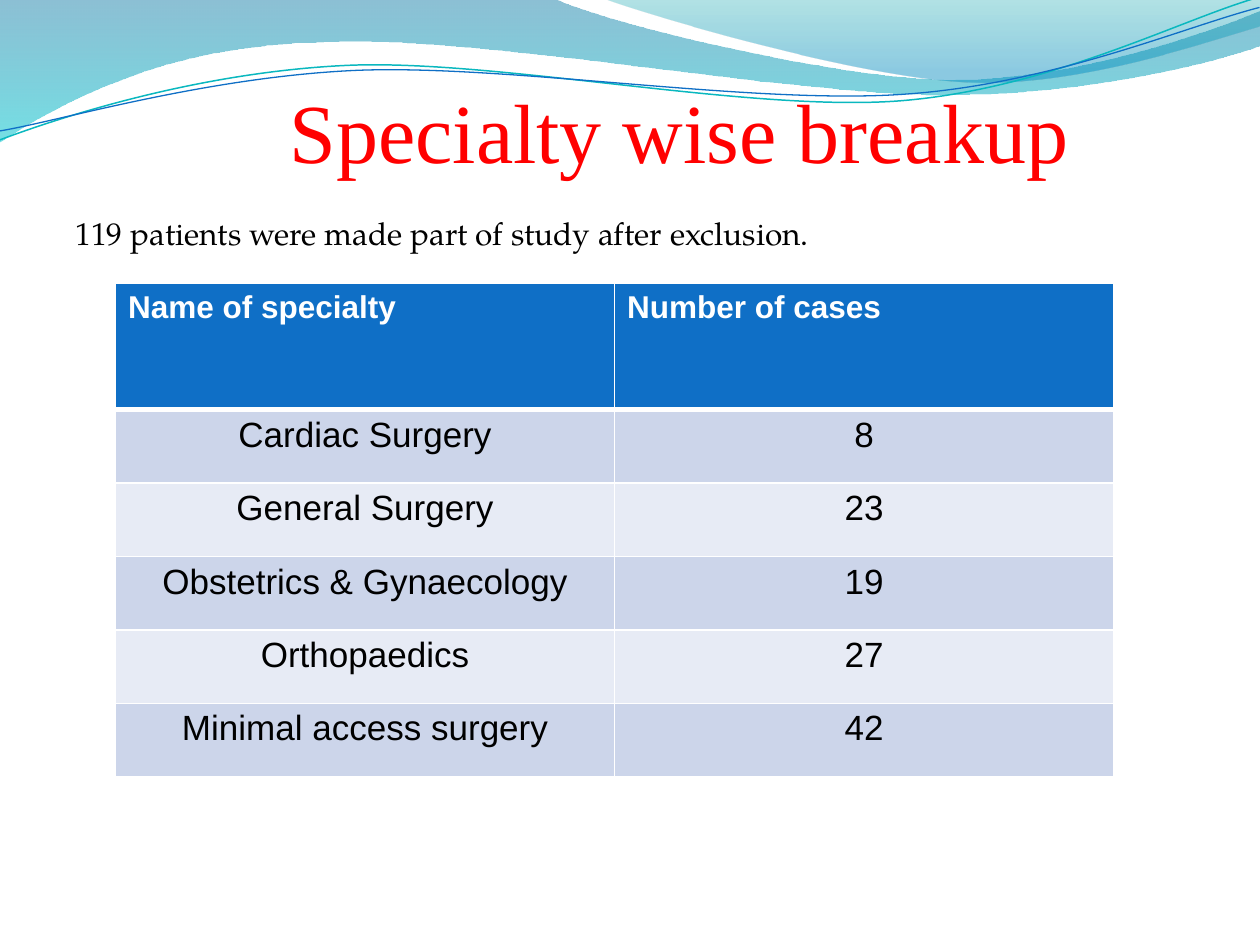
from lxml import etree
from pptx import Presentation
from pptx import util as u
from pptx.dml.color import RGBColor
from pptx.enum import text
from pptx.oxml.ns import qn

COLORS = {
    "title": "FF0000", "body": "000000", "white": "FFFFFF",
    "header": "0F6FC6", "band_dark": "CCD5EA", "band_light": "E7EBF5",
    "wave_top": "0074A1", "wave_bottom": "00C6CF",
    "crest_top": "00A1A9", "crest_bottom": "008BBF",
    "teal_line": "0AB8BF", "blue_line": "0F6FC6",
}
RGB = {name: RGBColor.from_string(value) for name, value in COLORS.items()}


def add_curve(shapes, start, segments, closed):
    """Draw a path in cm; segments hold one point (line) or three (cubic Bezier)."""
    fb = shapes.build_freeform(u.Cm(start[0]), u.Cm(start[1]))
    fb.add_line_segments([(u.Cm(x), u.Cm(y)) for seg in segments for x, y in seg],
                         close=closed)
    sp = fb.convert_to_shape()
    sp.shadow.inherit = False
    lines = iter(list(sp._element.spPr.iter(qn("a:lnTo"))))
    for seg in segments:
        first = next(lines)
        if len(seg) == 3:
            curve = etree.Element(qn("a:cubicBezTo"))
            first.addprevious(curve)
            for ln in (first, next(lines), next(lines)):
                curve.append(ln[0])
                ln.getparent().remove(ln)
    return sp


def style_run(p, font, size, color, bold=False):
    f = p.runs[0].font
    f.name, f.size, f.bold = font, u.Pt(size), bold
    f.color.rgb = RGB[color]


prs = Presentation()
prs.slide_width, prs.slide_height = u.Cm(25.4), u.Cm(19.05)
s = prs.slides.add_slide(prs.slide_layouts[6])

# Header waves: start, segments, gradient stops (position, colour, opacity %)
waves = [
    ((0, -0.02),
     [[(11.18, -0.02)],
      [(12.09, 0.43), (16.87, 1.6), (19.25, 1.6)],
      [(21.67, 1.6), (24.33, 0.66), (25.4, 0.23)],
      [(25.43, 0.91)],
      [(24.97, 1.12), (22.1, 1.93), (18.95, 1.91)],
      [(15.8, 1.91), (9.7, 0.71), (6.53, 0.86)],
      [(3.28, 0.89), (1.17, 2.11), (-0.03, 2.87)]],
     [(0, "wave_top", 45), (1, "wave_bottom", 55)]),
    ((12.17, -0.02),
     [[(12.93, 0.28), (17.32, 1.57), (19.53, 1.65)],
      [(21.74, 1.75), (24.41, 0.81), (25.4, 0.53)],
      [(25.4, 0)]],
     [(0, "crest_top", 30), (0.8, "crest_bottom", 45)]),
]
for start, segments, stops in waves:
    sp = add_curve(s.shapes, start, segments, True)
    sp.line.fill.background()
    sp.fill.gradient()
    sp.fill.gradient_angle = 270
    for stop, (position, color, _) in zip(sp.fill.gradient_stops, stops):
        stop.position = position
        stop.color.rgb = RGB[color]
    for clr, (_, _, opacity) in zip(sp._element.spPr.iter(qn("a:srgbClr")), stops):
        etree.SubElement(clr, qn("a:alpha"), val=str(opacity * 1000))

# Thin lines along the waves, tilted as a whole
wave_lines = [
    ((-0.05, 2.22),
     [[(1.19, 1.82), (4.02, 1.04), (7.05, 1.05)],
      [(10.05, 1.07), (15.02, 2.37), (18.08, 2.29)],
      [(21.13, 2.2), (23.86, 0.91), (25.41, 0.55)]], "teal_line", 0.85),
    ((-0.04, 2.04),
     [[(1.16, 1.9), (4.17, 1.15), (7.2, 1.16)],
      [(10.25, 1.18), (15.13, 2.23), (18.19, 2.16)],
      [(21.21, 2.1), (23.93, 1.06), (25.44, 0.75)]], "blue_line", 0.75),
]
for start, segments, color, width in wave_lines:
    sp = add_curve(s.shapes, start, segments, False)
    sp.rotation = 357.3
    sp.fill.background()
    sp.line.color.rgb = RGB[color]
    sp.line.width = u.Pt(width)

# Body sentence and title
tf = s.shapes.add_textbox(u.Cm(1.27), u.Cm(2.97), u.Cm(22.86), u.Cm(15.04)).text_frame
tf.word_wrap = True
tf.margin_top = u.Cm(1.35)
tf.text = "119 patients were made part of study after exclusion."
style_run(tf.paragraphs[0], "TeX Gyre Pagella", 18, "body")

tf = s.shapes.add_textbox(u.Cm(3.82), u.Cm(1.47), u.Cm(17.98), u.Cm(2.31)).text_frame
tf.word_wrap = True
tf.text = "Specialty wise breakup"
tf.paragraphs[0].alignment = text.PP_ALIGN.RIGHT
style_run(tf.paragraphs[0], "Times New Roman", 48, "title")

# Table of cases
rows = [
    ("Name of specialty", "Number of cases"),
    ("Cardiac Surgery", "8"),
    ("General Surgery", "23"),
    ("Obstetrics & Gynaecology", "19"),
    ("Orthopaedics", "27"),
    ("Minimal access surgery", "42"),
]
table = s.shapes.add_table(len(rows), 2, u.Cm(2.33), u.Cm(5.72),
                           u.Cm(20.12), u.Cm(9.94)).table
for col in table.columns:
    col.width = u.Cm(10.06)
for i, values in enumerate(rows):
    header = i == 0
    table.rows[i].height = u.Cm(2.54 if header else 1.48)
    fill = "header" if header else "band_dark" if i % 2 else "band_light"
    for j, value in enumerate(values):
        cell = table.cell(i, j)
        cell.text = value
        cell.fill.solid()
        cell.fill.fore_color.rgb = RGB[fill]
        p = cell.text_frame.paragraphs[0]
        if header:
            style_run(p, "Arial", 18, "white", True)
        else:
            cell.margin_left = cell.margin_right = u.Cm(0.18)
            cell.margin_top = cell.margin_bottom = 0
            p.alignment = text.PP_ALIGN.CENTER
            p.line_spacing = 1.15
            style_run(p, "Arial", 20, "body")
        tcPr = cell._tc.get_or_add_tcPr()
        # The header's thick bottom border also serves as the top of the first row
        for k, side in enumerate("LRB" if i == 1 else "LRTB"):
            width = 3 if header and side == "B" else 1
            ln = etree.Element(qn(f"a:ln{side}"), w=str(u.Pt(width)))
            solid = etree.SubElement(ln, qn("a:solidFill"))
            etree.SubElement(solid, qn("a:srgbClr"), val=COLORS["white"])
            tcPr.insert(k, ln)

prs.save("out.pptx")
